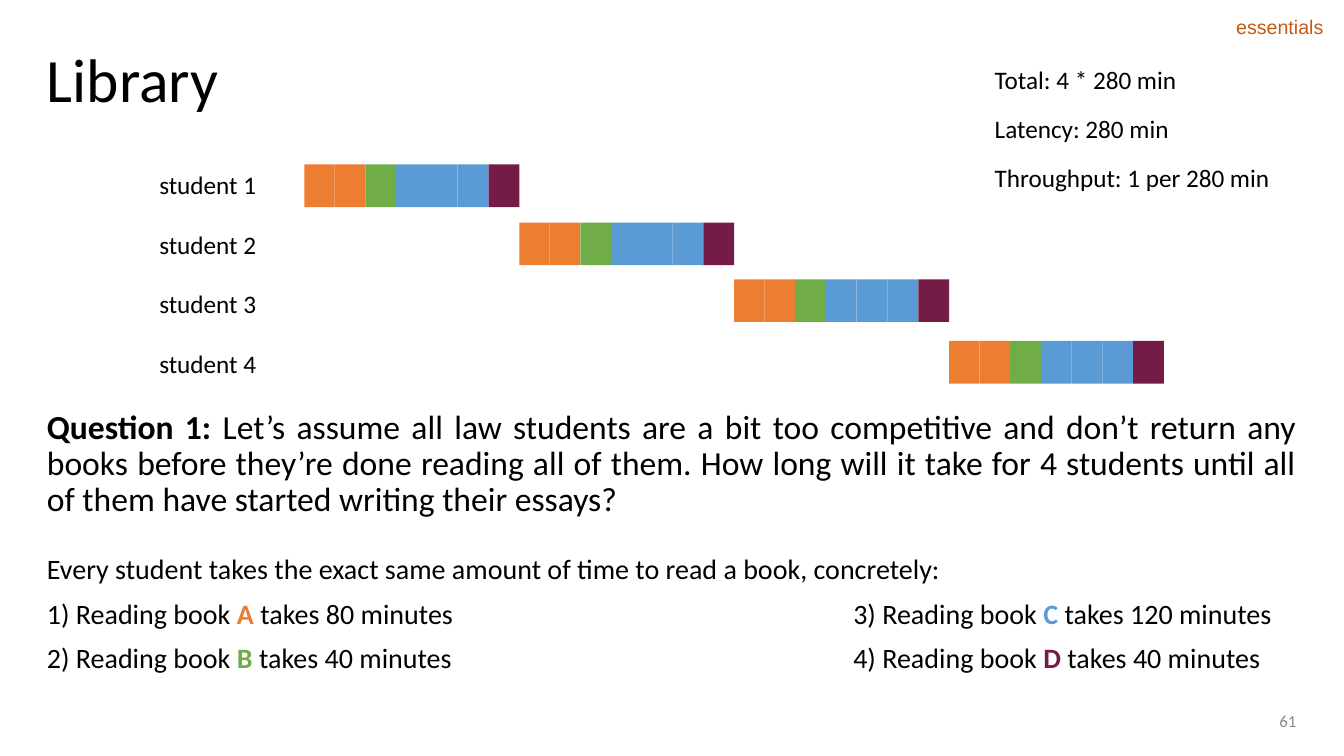
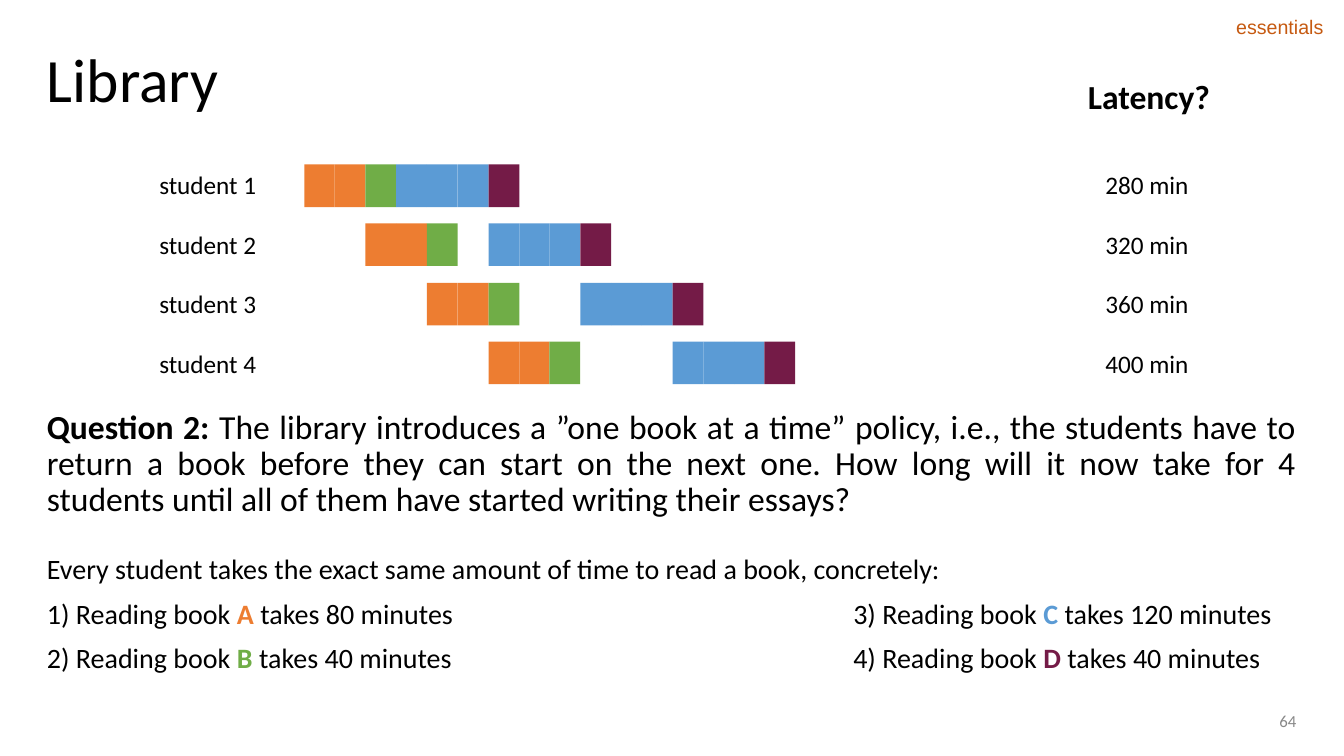
"""Build two library scheduling slides with student reading timelines."""

from dataclasses import dataclass

import lxml.etree
import pptx
import pptx.dml.color
import pptx.enum.shapes
import pptx.enum.text
import pptx.oxml.ns
import pptx.presentation
import pptx.slide
import pptx.text.text
import pptx.util

RGBColor = pptx.dml.color.RGBColor
Align = pptx.enum.text.PP_ALIGN
Anchor = pptx.enum.text.MSO_ANCHOR

EMU_PER_PX = 6350
PAGE_WIDTH, PAGE_HEIGHT = 1920, 1080
INSET = 14
MARGIN, CONTENT_WIDTH = 53, 1813
SECOND_COLUMN = 1152

BAR_LEFT, BAR_WIDTH, BAR_HEIGHT = 435, 307, 61
SLOTS_PER_BAR = 7

BLACK = RGBColor(0x00, 0x00, 0x00)
GREY = RGBColor(0x88, 0x88, 0x88)
RUST = RGBColor(0xC6, 0x5A, 0x11)
ORANGE = RGBColor(0xED, 0x7D, 0x31)
GREEN = RGBColor(0x70, 0xAD, 0x47)
BLUE = RGBColor(0x5B, 0x9B, 0xD5)
PLUM = RGBColor(0x74, 0x1B, 0x47)
BOOK_COLORS = {"A": ORANGE, "B": GREEN, "C": BLUE, "D": PLUM}


@dataclass(frozen=True)
class Box:
    left: int
    top: int
    width: int
    height: int


@dataclass(frozen=True)
class Style:
    size: int
    color: RGBColor = BLACK
    font: str = "Calibri"
    bold: bool = False
    align: Align = Align.LEFT
    anchor: Anchor = Anchor.TOP
    line_spacing: float = 1.0
    space_before: int = 0
    wrap: bool = True


@dataclass(frozen=True)
class Span:
    text: str
    bold: bool = False
    color: RGBColor | None = None


@dataclass(frozen=True)
class Timeline:
    top: int
    start: int
    books: str


@dataclass(frozen=True)
class Note:
    box: Box
    style: Style
    lines: tuple[str, ...]


@dataclass(frozen=True)
class Page:
    number: int
    question: str
    timelines: tuple[Timeline, ...]
    notes: tuple[Note, ...]


TITLE = Style(44, anchor=Anchor.MIDDLE, line_spacing=0.9)
BADGE = Style(14, RUST, "Arial", anchor=Anchor.MIDDLE, wrap=False)
NUMBER = Style(12, GREY, align=Align.RIGHT, anchor=Anchor.MIDDLE)
FACTS = Style(20, align=Align.JUSTIFY, line_spacing=0.9, space_before=10)
QUESTION = Style(24, align=Align.JUSTIFY, line_spacing=0.9, space_before=10)
ROW_LABELS = Style(18, align=Align.RIGHT, line_spacing=1.5, space_before=10)
SUMMARY = Style(18, line_spacing=1.15, space_before=10)
HEADING = Style(24, bold=True, align=Align.CENTER, line_spacing=0.9, space_before=10)

STUDENTS = Note(
    Box(91, 207, 289, 354), ROW_LABELS, tuple(f"student {n}" for n in range(1, 5))
)
READING_TIMES = ((("A", 80), ("C", 120)), (("B", 40), ("D", 40)))

PAGES = (
    Page(
        61,
        "Let’s assume all law students are a bit too competitive and don’t return "
        "any books before they’re done reading all of them. How long will it take "
        "for 4 students until all of them have started writing their essays?",
        tuple(
            Timeline(top, row * SLOTS_PER_BAR, "AABCCCD")
            for row, top in enumerate((235, 318, 399, 487))
        ),
        (
            Note(
                Box(1407, 72, 478, 230),
                SUMMARY,
                ("Total: 4 * 280 min", "Latency: 280 min", "Throughput: 1 per 280 min"),
            ),
        ),
    ),
    Page(
        64,
        "The library introduces a ”one book at a time” policy, i.e., the students "
        "have to return a book before they can start on the next one. How long will "
        "it now take for 4 students until all of them have started writing their "
        "essays?",
        tuple(
            Timeline(top, row * 2, "AAB" + "." * row + "CCCD")
            for row, top in enumerate((235, 319, 404, 488))
        ),
        (
            Note(Box(1437, 101, 409, 124), HEADING, ("Latency?",)),
            Note(
                Box(1423, 207, 289, 354),
                ROW_LABELS,
                tuple(f"{minutes} min" for minutes in range(280, 401, 40)),
            ),
        ),
    ),
)


def px(length: int) -> pptx.util.Emu:
    """Turn pixels into EMU."""
    return pptx.util.Emu(length * EMU_PER_PX)


def add_tab_stop(para: pptx.text.text._Paragraph, position: int) -> None:
    """Give a paragraph one left tab stop."""
    qn = pptx.oxml.ns.qn
    stops = lxml.etree.SubElement(para._p.get_or_add_pPr(), qn("a:tabLst"))
    lxml.etree.SubElement(stops, qn("a:tab"), pos=str(px(position)), algn="l")


def add_text(
    slide: pptx.slide.Slide, box: Box, style: Style, lines: list[list[Span]]
) -> None:
    """Add a text box with one paragraph per line of spans."""
    shape = slide.shapes.add_textbox(
        px(box.left), px(box.top), px(box.width), px(box.height)
    )
    frame = shape.text_frame
    frame.word_wrap = style.wrap
    frame.vertical_anchor = style.anchor
    frame.margin_left = frame.margin_right = px(INSET)
    frame.margin_top = frame.margin_bottom = px(INSET)
    for index, spans in enumerate(lines):
        para = frame.add_paragraph() if index else frame.paragraphs[0]
        if any("\t" in span.text for span in spans):
            add_tab_stop(para, SECOND_COLUMN)
        para.alignment = style.align
        para.line_spacing = style.line_spacing
        para.space_before = pptx.util.Pt(style.space_before)
        para.font.name = style.font
        para.font.size = pptx.util.Pt(style.size)
        para.font.bold = style.bold
        para.font.color.rgb = style.color
        for span in spans:
            run = para.add_run()
            run.text = span.text
            if span.bold:
                run.font.bold = True
            if span.color is not None:
                run.font.color.rgb = span.color


def add_note(slide: pptx.slide.Slide, note: Note) -> None:
    """Add a text box of plain lines."""
    add_text(slide, note.box, note.style, [[Span(line)] for line in note.lines])


def slot_left(slot: int) -> int:
    """Return the left edge of a time slot."""
    return BAR_LEFT + slot * BAR_WIDTH // SLOTS_PER_BAR


def add_timeline(slide: pptx.slide.Slide, timeline: Timeline) -> None:
    """Draw one student's reading slots as a group."""
    group = slide.shapes.add_group_shape()
    for slot, book in enumerate(timeline.books, timeline.start):
        if book not in BOOK_COLORS:
            continue
        left = slot_left(slot)
        cell = group.shapes.add_shape(
            pptx.enum.shapes.MSO_SHAPE.RECTANGLE,
            px(left),
            px(timeline.top),
            px(slot_left(slot + 1) - left),
            px(BAR_HEIGHT),
        )
        cell.shadow.inherit = False
        cell.fill.solid()
        cell.fill.fore_color.rgb = BOOK_COLORS[book]
        cell.line.fill.background()


def reading_facts() -> list[list[Span]]:
    """Return the lines that list the reading time of each book."""
    lines = [
        [
            Span(
                "Every student takes the exact same amount of time to read a book, "
                "concretely:"
            )
        ]
    ]
    for row, entries in enumerate(READING_TIMES, 1):
        spans = []
        for column, (book, minutes) in enumerate(entries):
            gap = "\t" if column else ""
            spans += [
                Span(f"{gap}{row + 2 * column}) Reading book "),
                Span(book, True, BOOK_COLORS[book]),
                Span(f" takes {minutes} minutes"),
            ]
        lines.append(spans)
    return lines


def add_page(deck: pptx.presentation.Presentation, index: int, page: Page) -> None:
    """Add one slide with its shared and own parts."""
    slide = deck.slides.add_slide(deck.slide_layouts[6])
    add_note(slide, Note(Box(MARGIN, 29, CONTENT_WIDTH, 179), TITLE, ("Library",)))
    add_note(slide, Note(Box(1356, 1001, 510, 58), NUMBER, (str(page.number),)))
    add_text(slide, Box(MARGIN, 780, CONTENT_WIDTH, 285), FACTS, reading_facts())
    question = [Span(f"Question {index}:", True), Span(f" {page.question}")]
    add_text(slide, Box(MARGIN, 572, CONTENT_WIDTH, 225), QUESTION, [question])
    add_note(slide, STUDENTS)
    for timeline in page.timelines:
        add_timeline(slide, timeline)
    for note in page.notes:
        add_note(slide, note)
    add_note(slide, Note(Box(1752, 14, 154, 49), BADGE, ("essentials",)))


def main() -> None:
    """Build and save the deck."""
    deck = pptx.Presentation()
    deck.slide_width = px(PAGE_WIDTH)
    deck.slide_height = px(PAGE_HEIGHT)
    for index, page in enumerate(PAGES, 1):
        add_page(deck, index, page)
    deck.save("out.pptx")


if __name__ == "__main__":
    main()
